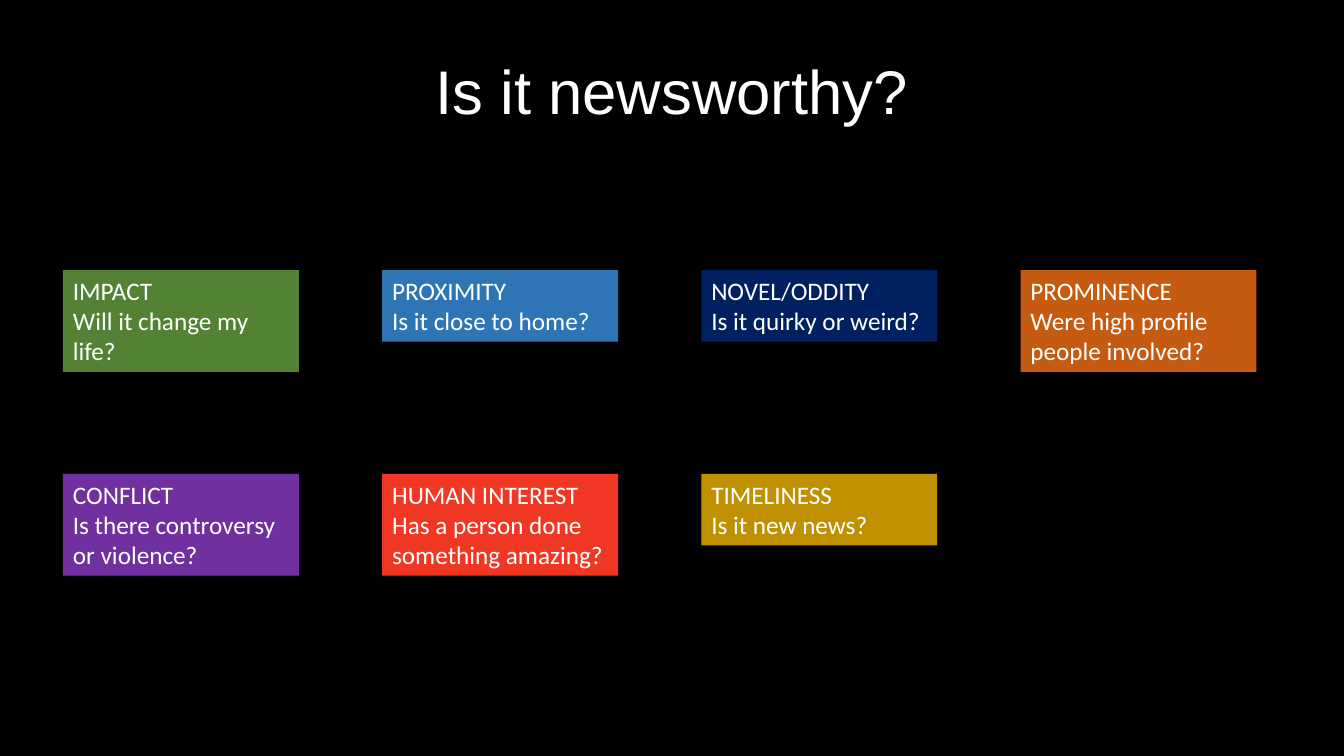
from pptx import Presentation
from pptx.dml.color import RGBColor
from pptx.enum.text import MSO_ANCHOR, MSO_AUTO_SIZE, PP_ALIGN
from pptx.util import Pt

CENTER = PP_ALIGN.CENTER
MIDDLE = MSO_ANCHOR.MIDDLE
GROW = MSO_AUTO_SIZE.SHAPE_TO_FIT_TEXT

BLACK = RGBColor(0x00, 0x00, 0x00)
WHITE = RGBColor(0xFF, 0xFF, 0xFF)
GREEN = RGBColor(0x54, 0x82, 0x35)
BLUE = RGBColor(0x2E, 0x75, 0xB6)
NAVY = RGBColor(0x00, 0x20, 0x60)
ORANGE = RGBColor(0xC5, 0x5A, 0x11)
PURPLE = RGBColor(0x70, 0x30, 0xA0)
RED = RGBColor(0xEF, 0x37, 0x23)
GOLD = RGBColor(0xBF, 0x90, 0x00)

SLIDE_WIDTH, SLIDE_HEIGHT = 960, 540
GRID_LEFT, GRID_TOP = 45, 193
COLUMN_STEP, ROW_STEP = 228, 145.5
CARD_WIDTH = 168.5
TWO_LINES, THREE_LINES = 51, 72.7

# Rows of cards: heading, question, fill, height
CARD_ROWS = [
    [
        ("IMPACT", "Will it change my life?", GREEN, THREE_LINES),
        ("PROXIMITY", "Is it close to home?", BLUE, TWO_LINES),
        ("NOVEL/ODDITY", "Is it quirky or weird?", NAVY, TWO_LINES),
        ("PROMINENCE", "Were high profile people involved?", ORANGE, THREE_LINES),
    ],
    [
        ("CONFLICT", "Is there controversy or violence?", PURPLE, THREE_LINES),
        ("HUMAN INTEREST", "Has a person done something amazing?", RED, THREE_LINES),
        ("TIMELINESS", "Is it new news?", GOLD, TWO_LINES),
    ],
]


def add_text(page, lines, left, top, width, height, font_name, size):
    """Add a wrapping text box with one white paragraph per line."""
    box = page.shapes.add_textbox(Pt(left), Pt(top), Pt(width), Pt(height))
    frame = box.text_frame
    frame.word_wrap = True
    frame.text = "\n".join(lines)
    for para in frame.paragraphs:
        para.font.name = font_name
        para.font.size = Pt(size)
        para.font.color.rgb = WHITE
    return box


def add_title(page, text):
    box = add_text(page, [text], 0, 15, SLIDE_WIDTH, 104.5, "Arial", 44)
    box.text_frame.vertical_anchor = MIDDLE
    para = box.text_frame.paragraphs[0]
    para.alignment = CENTER
    para.line_spacing = 0.9


def add_card(page, heading, question, fill, left, top, height):
    box = add_text(page, [heading, question], left, top, CARD_WIDTH, height,
                   "Calibri", 18)
    box.text_frame.auto_size = GROW
    box.fill.solid()
    box.fill.fore_color.rgb = fill


def main():
    deck = Presentation()
    deck.slide_width, deck.slide_height = Pt(SLIDE_WIDTH), Pt(SLIDE_HEIGHT)
    page = deck.slides.add_slide(deck.slide_layouts[6])
    page.background.fill.solid()
    page.background.fill.fore_color.rgb = BLACK

    add_title(page, "Is it newsworthy?")
    for row, cards in enumerate(CARD_ROWS):
        for column, (heading, question, fill, height) in enumerate(cards):
            add_card(page, heading, question, fill,
                     GRID_LEFT + column * COLUMN_STEP,
                     GRID_TOP + row * ROW_STEP, height)

    deck.save("out.pptx")


if __name__ == "__main__":
    main()
